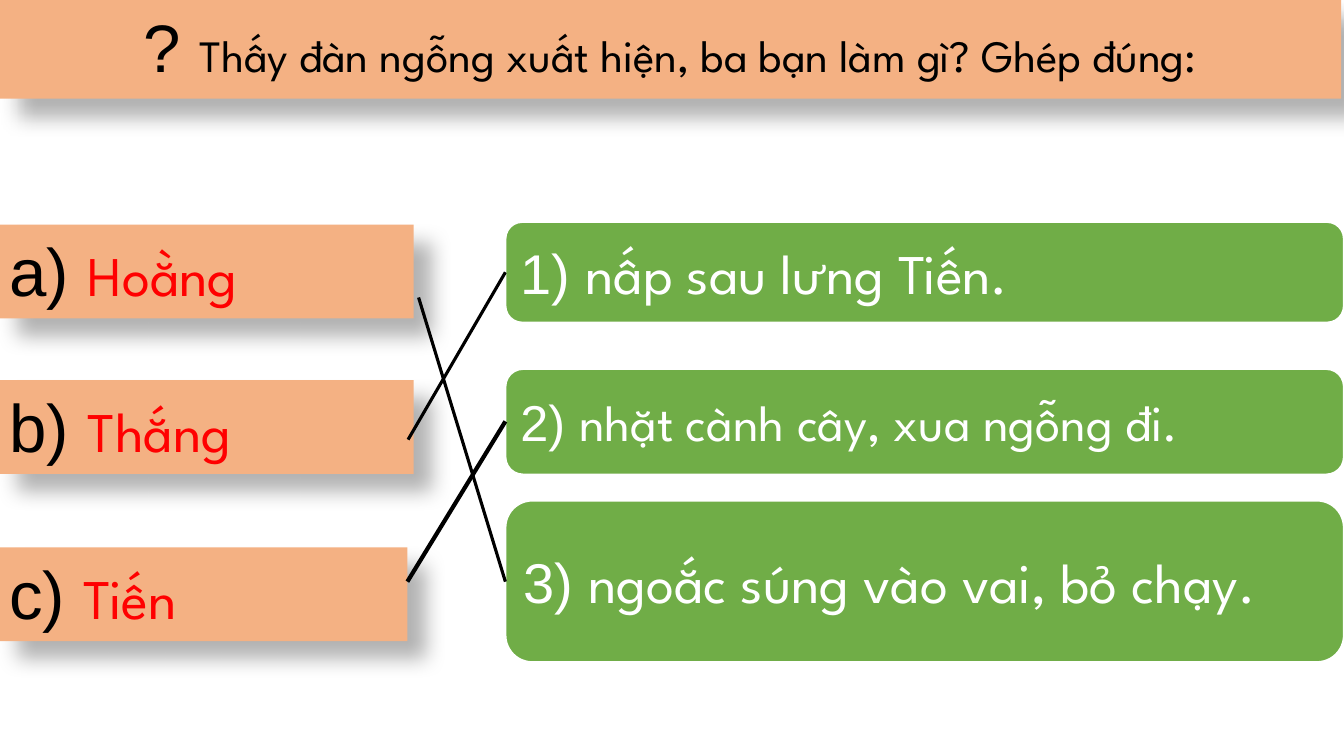
import dataclasses

import pptx
import pptx.dml.color
import pptx.enum.shapes
import pptx.enum.text
import pptx.oxml
import pptx.oxml.ns
import pptx.util

Pt = pptx.util.Pt
SHAPE = pptx.enum.shapes.MSO_SHAPE
ALIGN = pptx.enum.text.PP_ALIGN
ANCHOR = pptx.enum.text.MSO_ANCHOR
color = pptx.dml.color.RGBColor.from_string


@dataclasses.dataclass(frozen=True)
class Theme:
    peach: str = "F4B183"
    green: str = "70AD47"
    black: str = "000000"
    red: str = "FF0000"
    white: str = "FFFFFF"
    label_font: str = "Arial"
    text_font: str = "League Spartan"
    label_size: int = 48
    name_size: int = 40
    question_size: int = 32


theme = Theme()
SHADOW = (
    f'<a:effectLst {pptx.oxml.ns.nsdecls("a")}>'
    '<a:outerShdw blurRad="190500" dist="228600" dir="2700000" algn="tl" rotWithShape="0">'
    f'<a:srgbClr val="{theme.black}"><a:alpha val="30000"/></a:srgbClr>'
    "</a:outerShdw></a:effectLst>"
)
NO_EFFECTS = f'<a:effectLst {pptx.oxml.ns.nsdecls("a")}/>'


def add_box(kind, bounds, fill, anchor, align, spans):
    """Add a filled box; spans are (text, font, size, colour)."""
    box = page.shapes.add_shape(kind, *(Pt(length) for length in bounds))
    box.shadow.inherit = False
    box.fill.solid()
    box.fill.fore_color.rgb = color(fill)
    box.line.fill.background()
    box.text_frame.word_wrap = True
    box.text_frame.vertical_anchor = anchor
    para = box.text_frame.paragraphs[0]
    para.alignment = align
    for text, font, size, text_color in spans:
        span = para.add_run()
        span.text = text
        span.font.name = font
        span.font.size = Pt(size)
        span.font.color.rgb = color(text_color)
    return box


def add_peach_box(bounds, align, label, text, size, text_color):
    box = add_box(SHAPE.RECTANGLE, bounds, theme.peach, ANCHOR.TOP, align, [
        (label, theme.label_font, theme.label_size, theme.black),
        (text, theme.text_font, size, text_color),
    ])
    properties = box.fill._xPr
    properties.remove(properties.find(pptx.oxml.ns.qn("a:effectLst")))
    properties.append(pptx.oxml.parse_xml(SHADOW))


deck = pptx.Presentation()
deck.slide_width = Pt(960)
deck.slide_height = Pt(540)
page = deck.slides.add_slide(deck.slide_layouts[6])

add_peach_box((0, 0, 958, 70.5), ALIGN.CENTER, "? ",
              "Thấy đàn ngỗng xuất hiện, ba bạn làm gì? Ghép đúng:",
              theme.question_size, theme.black)

names = [
    ("a) ", "Hoằng", 160.5, 296),
    ("b) ", "Thắng", 271.5, 296),
    ("c) ", "Tiến", 391, 291.5),
]
for label, name, top, width in names:
    add_peach_box((-0.5, top, width, 67), ALIGN.LEFT, label, name,
                  theme.name_size, theme.red)

answers_left = 361
actions = [
    ("1) ", "nấp sau lưng Tiến.", 158.5, 72, 40),
    ("2) ", "nhặt cành cây, xua ngỗng đi.", 263.5, 75.5, 36),
    ("3) ", "ngoắc súng vào vai, bỏ chạy.", 357.5, 115.5, 40),
]
for label, action, top, height, size in actions:
    box = add_box(SHAPE.ROUNDED_RECTANGLE, (answers_left, top, 599, height),
                  theme.green, ANCHOR.MIDDLE, ALIGN.LEFT, [
                      (label, theme.label_font, size, theme.white),
                      (action, theme.text_font, size, theme.white),
                  ])
    box.line.color.rgb = color(theme.white)
    box.line.width = Pt(1.5)

matches = [
    (291.5, 314, 194.5, 2.25),
    (299, 212.5, 415.5, 2.25),
    (291, 415.5, 301, 3),
]
for start_left, start_top, end_top, width in matches:
    match = page.shapes.add_connector(
        pptx.enum.shapes.MSO_CONNECTOR.STRAIGHT,
        Pt(start_left), Pt(start_top), Pt(answers_left), Pt(end_top))
    match.line.color.rgb = color(theme.black)
    match.line.width = Pt(width)
    match._element.spPr.append(pptx.oxml.parse_xml(NO_EFFECTS))

deck.save("out.pptx")
